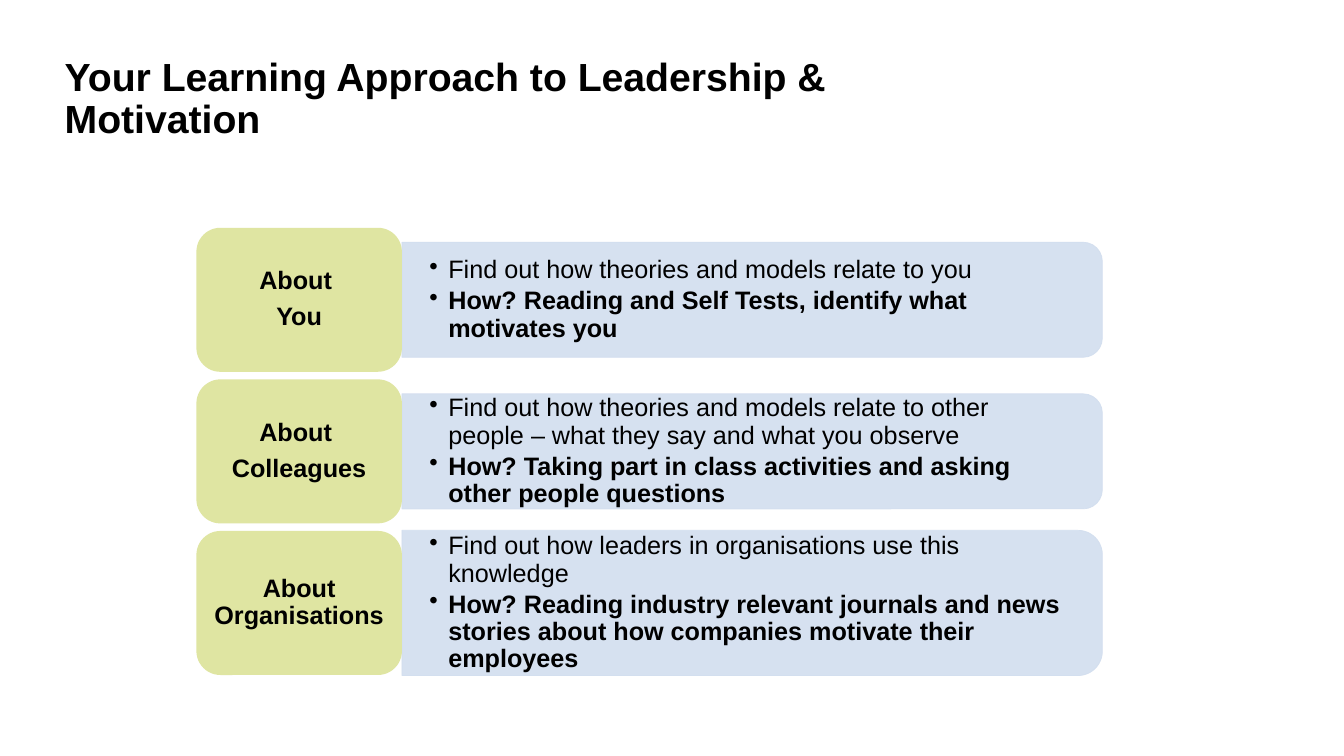
from pptx import Presentation
from pptx import util as u
from pptx.dml.color import RGBColor
from pptx.enum import shapes, text
from pptx.oxml.ns import qn
from lxml import etree

BLACK, GREEN, BLUE = "000000", "DFE5A2", "D2DEEF"
TILE_WIDTH, TILE_HEIGHT, ROW_PITCH = 5.18, 3.63, 3.82

# Tile lines, panel height in cm, finding, method
ROWS = [
    (["About ", "You"], 2.9,
     "Find out how theories and models relate to you",
     "How? Reading and Self Tests, identify what motivates you"),
    (["About ", "Colleagues"], 2.9,
     "Find out how theories and models relate to other people – what they say and what you observe",
     "How? Taking part in class activities and asking other people questions"),
    (["About Organisations"], 3.66,
     "Find out how leaders in organisations use this knowledge",
     "How? Reading industry relevant journals and news stories about how companies motivate their employees"),
]


def colour(value):
    return RGBColor.from_string(value)


def set_frame(frame, side, end):
    frame.word_wrap = True
    frame.auto_size = text.MSO_AUTO_SIZE.NONE
    frame.vertical_anchor = text.MSO_ANCHOR.MIDDLE
    frame.margin_left = frame.margin_right = u.Cm(side)
    frame.margin_top = frame.margin_bottom = u.Cm(end)


def write(para, words, size=18, bold=False, align=text.PP_ALIGN.LEFT, after=0, bullet=False):
    if bullet:
        props = para._p.get_or_add_pPr()
        props.set("marL", str(u.Cm(0.48)))
        props.set("indent", str(-u.Cm(0.48)))
        etree.SubElement(props, qn("a:buChar")).set("char", "•")
    para.alignment = align
    para.line_spacing = 0.9
    para.space_before = u.Pt(0)
    para.space_after = u.Pt(after)
    span = para.add_run()
    span.text = words
    span.font.name = "Arial"
    span.font.size = u.Pt(size)
    span.font.bold = bold
    span.font.color.rgb = colour(BLACK)


def add_paragraph(frame, index):
    return frame.add_paragraph() if index else frame.paragraphs[0]


def set_alpha(shape, percent):
    for solid in shape._element.spPr.iter(qn("a:solidFill")):
        etree.SubElement(solid[0], qn("a:alpha")).set("val", str(percent * 1000))


def add_title(page, left, top, width, height):
    title = page.shapes.title
    title.left, title.top, title.width, title.height = map(u.Cm, (left, top, width, height))
    set_frame(title.text_frame, 0.25, 0.13)
    write(title.text_frame.paragraphs[0], "Your Learning Approach to Leadership & Motivation",
          size=28, bold=True)


def add_panel(page, left, middle, width, height, finding, method):
    # The shape is turned a quarter so its rounded corners face right
    panel = page.shapes.add_shape(
        shapes.MSO_SHAPE.ROUND_2_SAME_RECTANGLE,
        u.Cm(left + (width - height) / 2), u.Cm(middle - width / 2), u.Cm(height), u.Cm(width))
    panel.rotation = 90
    panel.shadow.inherit = False
    panel.fill.solid()
    panel.fill.fore_color.rgb = colour(BLUE)
    panel.line.color.rgb = colour(BLUE)
    panel.line.width = u.Pt(0.5)
    set_alpha(panel, 90)

    # Upright bullets over the panel
    box = page.shapes.add_textbox(u.Cm(left), u.Cm(middle - height / 2),
                                  u.Cm(width - 0.15), u.Cm(height))
    set_frame(box.text_frame, 0.69, 0)
    for index, words in enumerate((finding, method)):
        write(add_paragraph(box.text_frame, index), words, bold=index == 1,
              after=2.7, bullet=True)


def add_tile(page, left, top, lines):
    tile = page.shapes.add_shape(shapes.MSO_SHAPE.ROUNDED_RECTANGLE, u.Cm(left), u.Cm(top),
                                 u.Cm(TILE_WIDTH), u.Cm(TILE_HEIGHT))
    tile.shadow.inherit = False
    tile.fill.solid()
    tile.fill.fore_color.rgb = colour(GREEN)
    tile.line.fill.background()
    set_frame(tile.text_frame, 0.18, 0.1)
    for index, words in enumerate(lines):
        write(add_paragraph(tile.text_frame, index), words, bold=True,
              align=text.PP_ALIGN.CENTER, after=6.3)


def add_rows(page, left, top, width):
    for index, (lines, panel_height, finding, method) in enumerate(ROWS):
        row_top = top + index * ROW_PITCH
        add_panel(page, left + TILE_WIDTH, row_top + TILE_HEIGHT / 2,
                  width - TILE_WIDTH, panel_height, finding, method)
        add_tile(page, left, row_top, lines)


def main():
    deck = Presentation()
    deck.slide_width, deck.slide_height = u.Cm(33.87), u.Cm(19.05)
    page = deck.slides.add_slide(deck.slide_layouts[5])
    add_title(page, 1.38, 1.17, 22.73, 2.69)
    add_rows(page, 4.95, 5.74, 22.83)
    deck.save("out.pptx")


if __name__ == "__main__":
    main()
